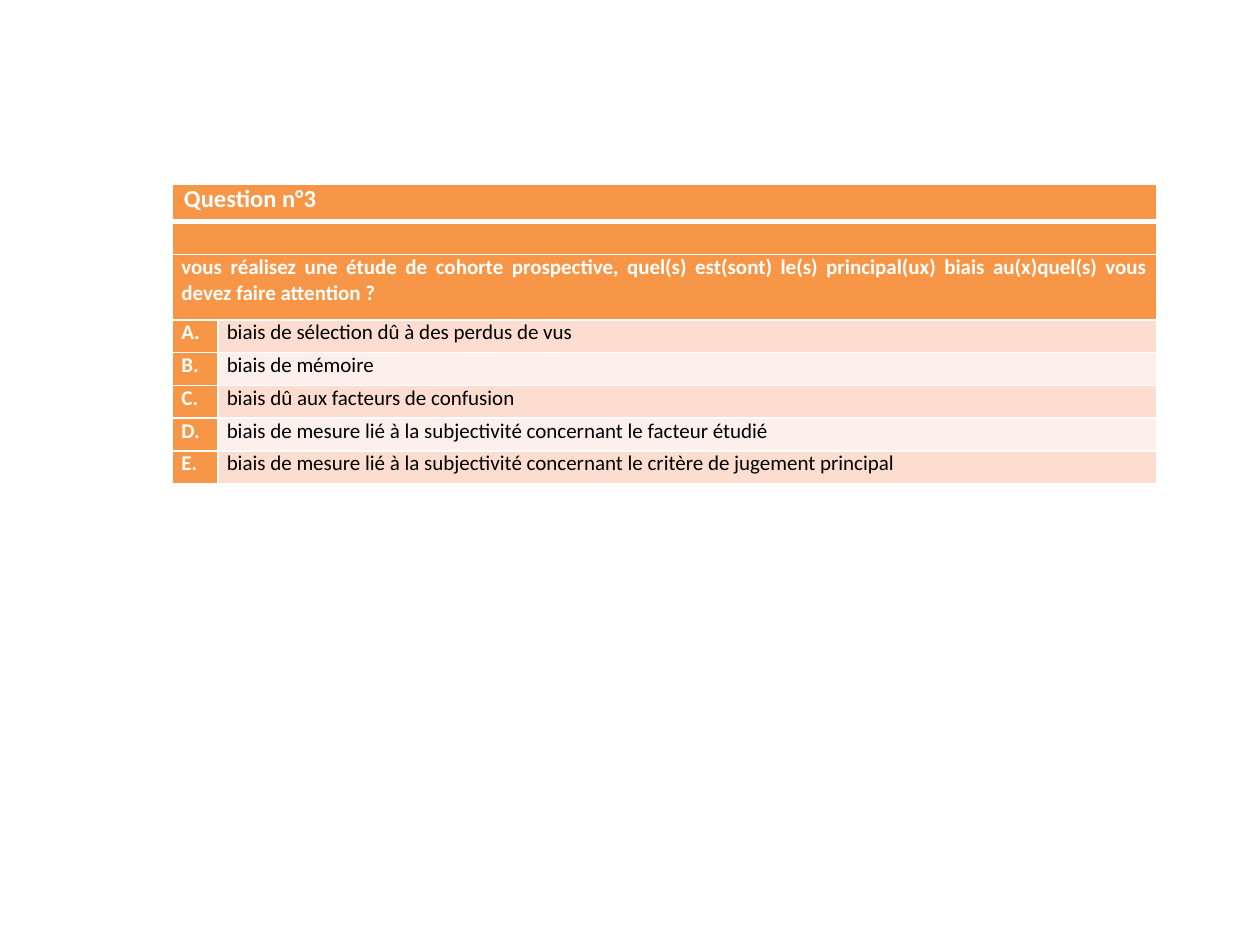
from lxml import etree
from pptx import Presentation
from pptx.dml.color import RGBColor
from pptx.enum import text
from pptx.oxml import ns
from pptx.util import Inches, Pt

ORANGE = RGBColor(0xF7, 0x96, 0x46)
PEACH = RGBColor(0xFC, 0xDD, 0xCF)
PALE_PEACH = RGBColor(0xFD, 0xEF, 0xE9)
WHITE = RGBColor(0xFF, 0xFF, 0xFF)
BLACK = RGBColor(0, 0, 0)

TITLE = "Question n°3"
QUESTION = (
    "vous réalisez une étude de cohorte prospective, quel(s) est(sont) le(s) "
    "principal(ux) biais au(x)quel(s) vous devez faire attention\u00a0?"
)
ANSWERS = [
    "biais de sélection dû à des perdus de vus",
    "biais de mémoire",
    "biais dû aux facteurs de confusion",
    "biais de mesure lié à la subjectivité concernant le facteur étudié",
    "biais de mesure lié à la subjectivité concernant le critère de jugement principal",
]
COLUMN_WIDTHS = [0.36, 7.45]
ROW_HEIGHTS = [0.3, 0.26, 0.52] + [0.26] * len(ANSWERS)
HEADING_ROWS = 3


def set_borders(cell, top=1, bottom=1):
    properties = cell._tc.get_or_add_tcPr()
    sides = [("lnL", 1), ("lnR", 1), ("lnT", top), ("lnB", bottom)]
    for position, (side, points) in enumerate(sides):
        line = etree.Element(ns.qn("a:" + side), w=str(Pt(points)))
        fill = etree.SubElement(line, ns.qn("a:solidFill"))
        etree.SubElement(fill, ns.qn("a:srgbClr"), val=str(WHITE))
        properties.insert(position, line)


def fill_cell(cell, content, fill, color=WHITE, bold=True, size=12):
    cell.fill.solid()
    cell.fill.fore_color.rgb = fill
    cell.margin_left = cell.margin_right = Inches(0.07)
    cell.margin_top = cell.margin_bottom = 0
    paragraph = cell.text_frame.paragraphs[0]
    paragraph.text = content
    for run in paragraph.runs:
        run.font.name = "Calibri"
        run.font.size = Pt(size)
        run.font.bold = bold
        run.font.color.rgb = color
    # The end mark keeps empty cells from stretching their row
    etree.SubElement(paragraph._p, ns.qn("a:endParaRPr"), sz=str(size * 100))
    return paragraph


presentation = Presentation()
presentation.slide_width = Inches(10)
presentation.slide_height = Inches(7.5)
slide = presentation.slides.add_slide(presentation.slide_layouts[6])

# Table grid
table = slide.shapes.add_table(
    len(ROW_HEIGHTS), len(COLUMN_WIDTHS), Inches(1.37), Inches(1.46),
    Inches(sum(COLUMN_WIDTHS)), Inches(sum(ROW_HEIGHTS)),
).table
for column, width in zip(table.columns, COLUMN_WIDTHS):
    column.width = Inches(width)
for row, height in zip(table.rows, ROW_HEIGHTS):
    row.height = Inches(height)

# Heading rows across both columns
for index, (content, size) in enumerate([(TITLE, 14), ("", 12), (QUESTION, 12)]):
    table.cell(index, 0).merge(table.cell(index, 1))
    paragraph = fill_cell(table.cell(index, 0), content, ORANGE, size=size)
    fill_cell(table.cell(index, 1), "", ORANGE)
    paragraph.alignment = text.PP_ALIGN.JUSTIFY
table.cell(0, 0).text_frame.paragraphs[0]._p.get_or_add_pPr().set("marL", str(Inches(0.02)))

# Lettered answers in alternating bands
for index, (letter, answer) in enumerate(zip("ABCDE", ANSWERS)):
    row = HEADING_ROWS + index
    fill_cell(table.cell(row, 0), letter + ".", ORANGE)
    band = PALE_PEACH if index % 2 else PEACH
    fill_cell(table.cell(row, 1), answer, band, BLACK, bold=False)

# White rules, thicker below the title
for index, row in enumerate(table.rows):
    for cell in row.cells:
        set_borders(cell, top=3 if index == 1 else 1, bottom=3 if index == 0 else 1)

presentation.save("out.pptx")
